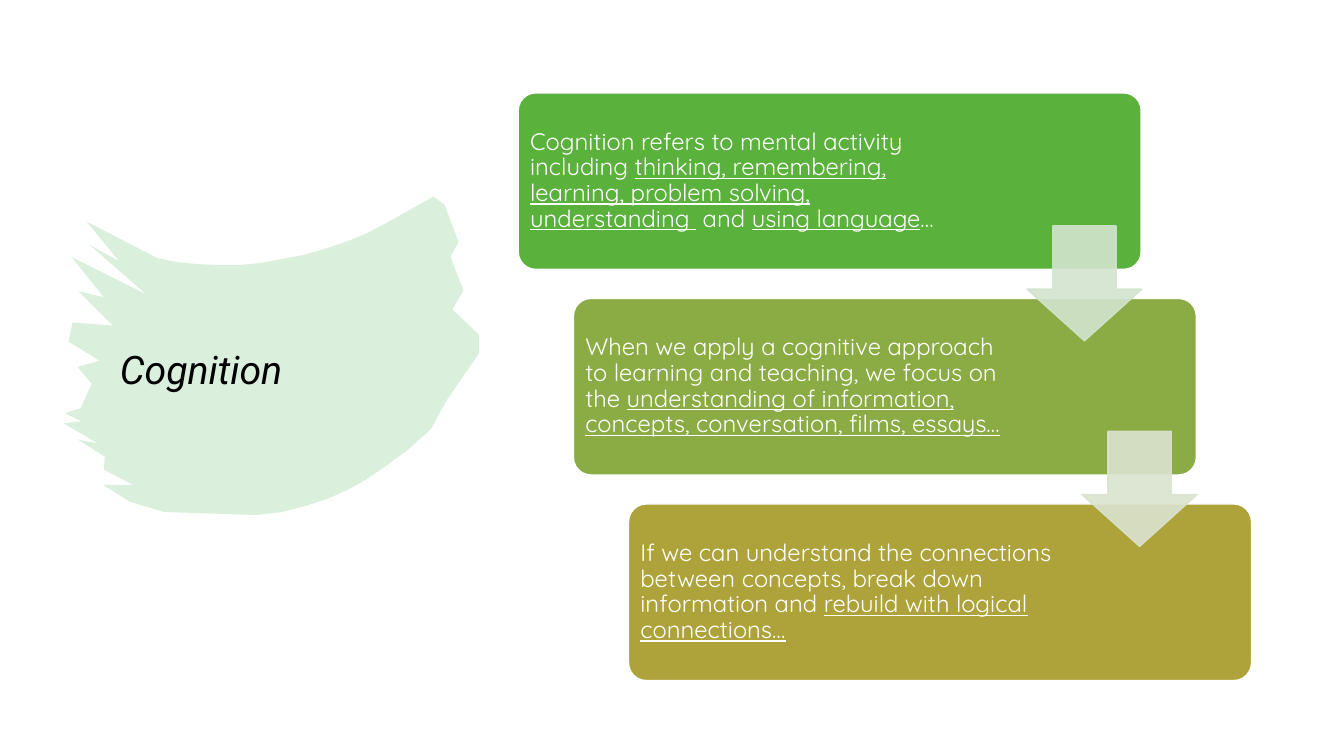
from dataclasses import dataclass

from lxml import etree
from pptx import Presentation
from pptx.dml.color import RGBColor
from pptx.enum import shapes, text
from pptx.oxml import ns
from pptx.util import Cm, Pt

Point = tuple[float, float]

WHITE = RGBColor(0xFF, 0xFF, 0xFF)
BLACK = RGBColor(0, 0, 0)
BRUSH = RGBColor(0x48, 0xB7, 0x58)
GREEN = RGBColor(0x5A, 0xB1, 0x3B)
OLIVE = RGBColor(0x8B, 0xAC, 0x44)
GOLD = RGBColor(0xAE, 0xA3, 0x3A)
MINT = RGBColor(0xD2, 0xE4, 0xCE)
SAGE = RGBColor(0xDA, 0xE3, 0xCF)

# Staircase: first box, then one step right and down for each next one
LEFT, TOP, WIDE, HIGH = 13.06, 2.34, 15.7, 4.45
STEP_X, STEP_Y, INSET = 1.39, 5.18, 0.13
ARROW_X, ARROW_Y, ARROW = 25.88, 5.69, 2.9

# Brush edges, in hundredths of an inch: two smooth curves, two ragged ends
UNIT = Cm(2.54) / 100
UPPER = [(156, 256), (230, 275), (330, 255), (400, 212)]
RIGHT = [(430, 195), (441, 203), (455, 240), (447, 255), (460, 288),
         (449, 307), (475, 332), (475, 351), (444, 396)]
LOWER = [(428, 425), (427, 425), (357, 504), (255, 511)]
BRISTLES = [(163, 508), (129, 498), (102, 481), (132, 481), (103, 466),
            (104, 453), (77, 436), (97, 440), (63, 420), (81, 418),
            (64, 410), (80, 405), (91, 381), (77, 364), (99, 358),
            (68, 339), (72, 320), (112, 323), (78, 289), (103, 295),
            (71, 255), (145, 292), (89, 243), (118, 259), (86, 220)]


@dataclass(frozen=True)
class Step:
    fill: RGBColor
    wide: float  # text width
    runs: list[tuple[str, bool]]  # wording, underlined


STEPS = [
    Step(GREEN, 10.9, [
        ("Cognition refers to mental activity including ", False),
        ("thinking, remembering, learning, problem solving, understanding ", True),
        (" and ", False),
        ("using language", True),
        ("…", False)]),
    Step(OLIVE, 11.18, [
        ("When we apply a cognitive approach to learning and teaching, "
         "we focus on the ", False),
        ("understanding of information, concepts, conversation, films, essays…",
         True)]),
    Step(GOLD, 11.18, [
        ("If we can understand the connections between concepts, break down "
         "information and ", False),
        ("rebuild with logical connections…", True)]),
]


def curve(knots: list[Point], count: int = 12) -> list[Point]:
    """Sample a cubic curve given by its ends and two handles."""
    dots = []
    for i in range(count + 1):
        t = i / count
        parts = ((1 - t) ** 3, 3 * t * (1 - t) ** 2, 3 * t * t * (1 - t), t ** 3)
        dots.append((sum(p * x for p, (x, _) in zip(parts, knots)),
                     sum(p * y for p, (_, y) in zip(parts, knots))))
    return dots


def fade(shape, share: int) -> None:
    """Set the opacity, in percent, of every solid colour of a shape."""
    for tone in shape._element.spPr.iter(ns.qn("a:srgbClr")):
        etree.SubElement(tone, ns.qn("a:alpha")).set("val", str(share * 1000))


def paint(shape, fill: RGBColor, line: RGBColor | None = None) -> None:
    shape.shadow.inherit = False
    shape.fill.solid()
    shape.fill.fore_color.rgb = fill
    if line is None:
        shape.line.fill.background()
    else:
        shape.line.color.rgb = line
        shape.line.width = Pt(1)


def write(shape, runs: list[tuple[str, bool]], *, font: str, size: float,
          color: RGBColor, italic: bool = False,
          inset: float | None = None) -> None:
    frame = shape.text_frame
    frame.word_wrap = True
    frame.auto_size = text.MSO_AUTO_SIZE.NONE
    frame.vertical_anchor = text.MSO_ANCHOR.MIDDLE
    if inset is not None:
        frame.margin_left = frame.margin_right = Cm(inset)
        frame.margin_top = frame.margin_bottom = Cm(inset)
    para = frame.paragraphs[0]
    para.alignment = text.PP_ALIGN.LEFT
    para.line_spacing = 0.9
    for words, under in runs:
        run = para.add_run()
        run.text = words
        run.font.name = font
        run.font.size = Pt(size)
        run.font.color.rgb = color
        run.font.italic = italic
        run.font.underline = under


def add_brush(slide):
    edge = curve(UPPER) + RIGHT + curve(LOWER) + BRISTLES
    pen = slide.shapes.build_freeform(*edge[0], scale=UNIT)
    pen.add_line_segments(edge[1:], close=True)
    brush = pen.convert_to_shape()
    paint(brush, BRUSH)
    fade(brush, 20)
    return brush


def add_step(slide, rank: int, step: Step) -> None:
    left, top = LEFT + rank * STEP_X, TOP + rank * STEP_Y
    box = slide.shapes.add_shape(
        shapes.MSO_SHAPE.ROUNDED_RECTANGLE,
        Cm(left), Cm(top), Cm(WIDE), Cm(HIGH))
    box.adjustments[0] = 0.1
    paint(box, step.fill, WHITE)
    label = slide.shapes.add_textbox(
        Cm(left + INSET), Cm(top + INSET), Cm(step.wide), Cm(HIGH - 2 * INSET))
    write(label, step.runs, font="Quicksand", size=17, color=WHITE, inset=0.17)


def add_arrow(slide, rank: int, tone: RGBColor) -> None:
    arrow = slide.shapes.add_shape(
        shapes.MSO_SHAPE.DOWN_ARROW, Cm(ARROW_X + rank * STEP_X),
        Cm(ARROW_Y + rank * STEP_Y), Cm(ARROW), Cm(ARROW))
    arrow.adjustments[0] = 0.55
    arrow.adjustments[1] = 0.45
    paint(arrow, tone, tone)
    fade(arrow, 90)


def main() -> None:
    deck = Presentation()
    deck.slide_width, deck.slide_height = Cm(33.87), Cm(19.05)
    slide = deck.slides.add_slide(deck.slide_layouts[5])

    # Title in front of the brush stroke
    brush = add_brush(slide)
    title = slide.shapes.title
    title.left, title.top = Cm(2.77), Cm(7.29)
    title.width, title.height = Cm(8.36), Cm(4.17)
    write(title, [("Cognition", False)], font="Roboto", size=28, color=BLACK,
          italic=True)
    brush._element.addnext(title._element)

    # Steps, then the arrows that lie over them
    for rank, step in enumerate(STEPS):
        add_step(slide, rank, step)
    for rank, tone in enumerate((MINT, SAGE)):
        add_arrow(slide, rank, tone)

    deck.save("out.pptx")


if __name__ == "__main__":
    main()
